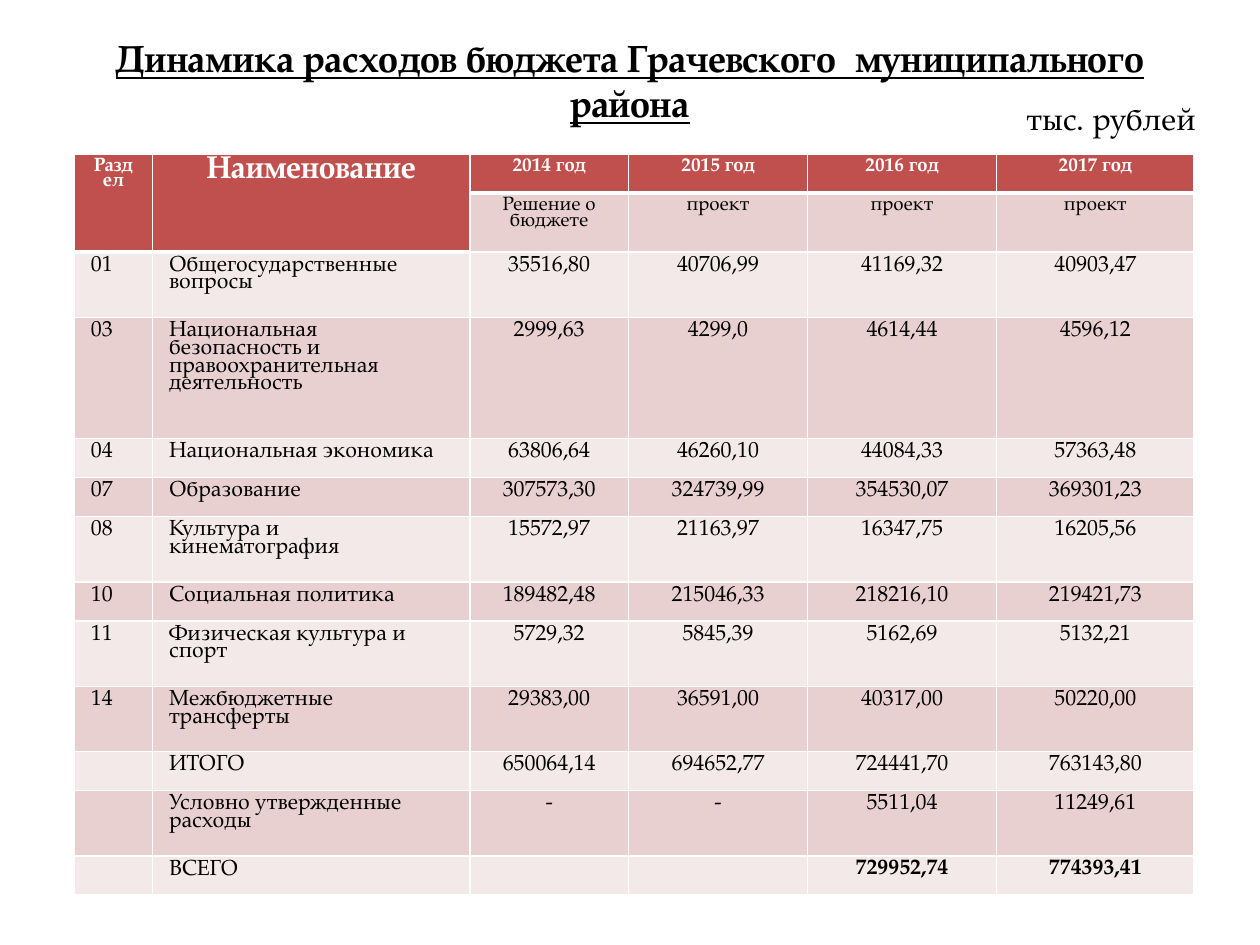
from lxml import etree
from pptx import Presentation
from pptx.dml.color import RGBColor
from pptx.enum.text import MSO_ANCHOR, MSO_AUTO_SIZE, PP_ALIGN
from pptx.oxml.ns import qn
from pptx.util import Pt

LEFT, CENTER = PP_ALIGN.LEFT, PP_ALIGN.CENTER
MIDDLE = MSO_ANCHOR.MIDDLE
NO_FIT = MSO_AUTO_SIZE.NONE
FONT = "TeX Gyre Pagella"
COLORS = {"black": "000000", "white": "FFFFFF", "head": "C0504D",
          "dark": "E8D0D0", "light": "F4E9E9"}

COLS = [44.6, 181.4, 90.7, 102.3, 108, 113]
ONE, TWO, FOUR = 22.3, 37.4, 69.1
HEIGHTS = [ONE, 33.8, TWO, FOUR, ONE, ONE, TWO, ONE, TWO, TWO, ONE, TWO, ONE]
ROWS = [
    ["Раздел", "Наименование", "2014 год", "2015 год", "2016 год", "2017 год"],
    ["", "", "Решение о бюджете", "проект", "проект", "проект"],
    ["01", "Общегосударственные вопросы",
     "35516,80", "40706,99", "41169,32", "40903,47"],
    ["03", "Национальная безопасность и правоохранительная деятельность",
     "2999,63", "4299,0", "4614,44", "4596,12"],
    ["04", "Национальная экономика",
     "63806,64", "46260,10", "44084,33", "57363,48"],
    ["07", "Образование",
     "307573,30", "324739,99", "354530,07", "369301,23"],
    ["08", "Культура и кинематография",
     "15572,97", "21163,97", "16347,75", "16205,56"],
    ["10", "Социальная политика",
     "189482,48", "215046,33", "218216,10", "219421,73"],
    ["11", "Физическая культура и спорт",
     "5729,32", "5845,39", "5162,69", "5132,21"],
    ["14", "Межбюджетные трансферты",
     "29383,00", "36591,00", "40317,00", "50220,00"],
    ["", "ИТОГО", "650064,14", "694652,77", "724441,70", "763143,80"],
    ["", "Условно утвержденные расходы", "-", "-", "5511,04", "11249,61"],
    ["", "ВСЕГО", "", "", "729952,74", "774393,41"],
]


def write(frame, text, size=12.5, color="black", bold=False, line=False,
          align=CENTER, space=1.0):
    para = frame.paragraphs[0]
    para.alignment = align
    para.line_spacing = space
    if not text:
        # An empty cell must not outgrow its row
        para._p.get_or_add_endParaRPr().set("sz", str(int(size * 100)))
        return
    run = para.add_run()
    run.text = text
    font = run.font
    font.name, font.size = FONT, Pt(size)
    font.bold, font.underline = bold, line
    font.color.rgb = RGBColor.from_string(COLORS[color])


class Deck:
    def __init__(self, wide, high):
        self.prs = Presentation()
        self.prs.slide_width, self.prs.slide_height = Pt(wide), Pt(high)
        self.slide = self.prs.slides.add_slide(self.prs.slide_layouts[5])

    def title(self, text, x, y, w, h, **style):
        shape = self.slide.shapes.title
        shape.left, shape.top, shape.width, shape.height = map(Pt, (x, y, w, h))
        self.fill_frame(shape.text_frame, text, style)

    def label(self, text, x, y, w, h, **style):
        box = self.slide.shapes.add_textbox(Pt(x), Pt(y), Pt(w), Pt(h))
        self.fill_frame(box.text_frame, text, style)

    def fill_frame(self, frame, text, style):
        frame.auto_size = NO_FIT
        frame.word_wrap = True
        frame.vertical_anchor = MIDDLE
        write(frame, text, **style)

    def border(self, cell, side, width):
        props = cell._tc.get_or_add_tcPr()
        edge = etree.SubElement(props, qn("a:ln" + side), w=str(Pt(width)))
        fill = etree.SubElement(edge, qn("a:solidFill"))
        etree.SubElement(fill, qn("a:srgbClr"), val=COLORS["white"])

    def cell(self, cell, text, fill, heavy, top, **style):
        cell.margin_left = cell.margin_right = Pt(9.5)
        cell.margin_top = cell.margin_bottom = Pt(2.9)
        # Each row's top edge belongs to the row above, save the first
        self.border(cell, "L", 1)
        self.border(cell, "R", 1)
        if top:
            self.border(cell, "T", 1)
        self.border(cell, "B", 3 if heavy else 1)
        cell.fill.solid()
        cell.fill.fore_color.rgb = RGBColor.from_string(COLORS[fill])
        write(cell.text_frame, text, space=0.8, **style)

    def table(self, x, y):
        grid = self.slide.shapes.add_table(
            len(ROWS), len(COLS), Pt(x), Pt(y),
            Pt(sum(COLS)), Pt(sum(HEIGHTS))).table
        for col, width in zip(grid.columns, COLS):
            col.width = Pt(width)
        for row, height in zip(grid.rows, HEIGHTS):
            row.height = Pt(height)
        for r, texts in enumerate(ROWS):
            for c, text in enumerate(texts):
                head = r == 0 or (r == 1 and c < 2)
                size = 12.5 if r > 1 else 18 if (r, c) == (0, 1) else 11
                self.cell(
                    grid.cell(r, c), text,
                    "head" if head else "dark" if r % 2 else "light",
                    heavy=head, top=r == 0, size=size,
                    color="white" if head else "black",
                    bold=head or (r == len(ROWS) - 1 and c > 3),
                    align=LEFT if r > 1 and c < 2 else CENTER)
        # Section and name headings span both header rows
        for c in range(2):
            grid.cell(0, c).merge(grid.cell(1, c))


def main():
    deck = Deck(720, 540)
    # Heading
    deck.title("Динамика расходов бюджета Грачевского  муниципального района",
               36, 21.6, 648, 48, size=21.6, bold=True, line=True)
    # Budget table
    deck.table(42.5, 88)
    # Unit of measure
    deck.label("тыс. рублей", 575.5, 53.5, 119, 28, size=18)
    deck.prs.save("out.pptx")


if __name__ == "__main__":
    main()
